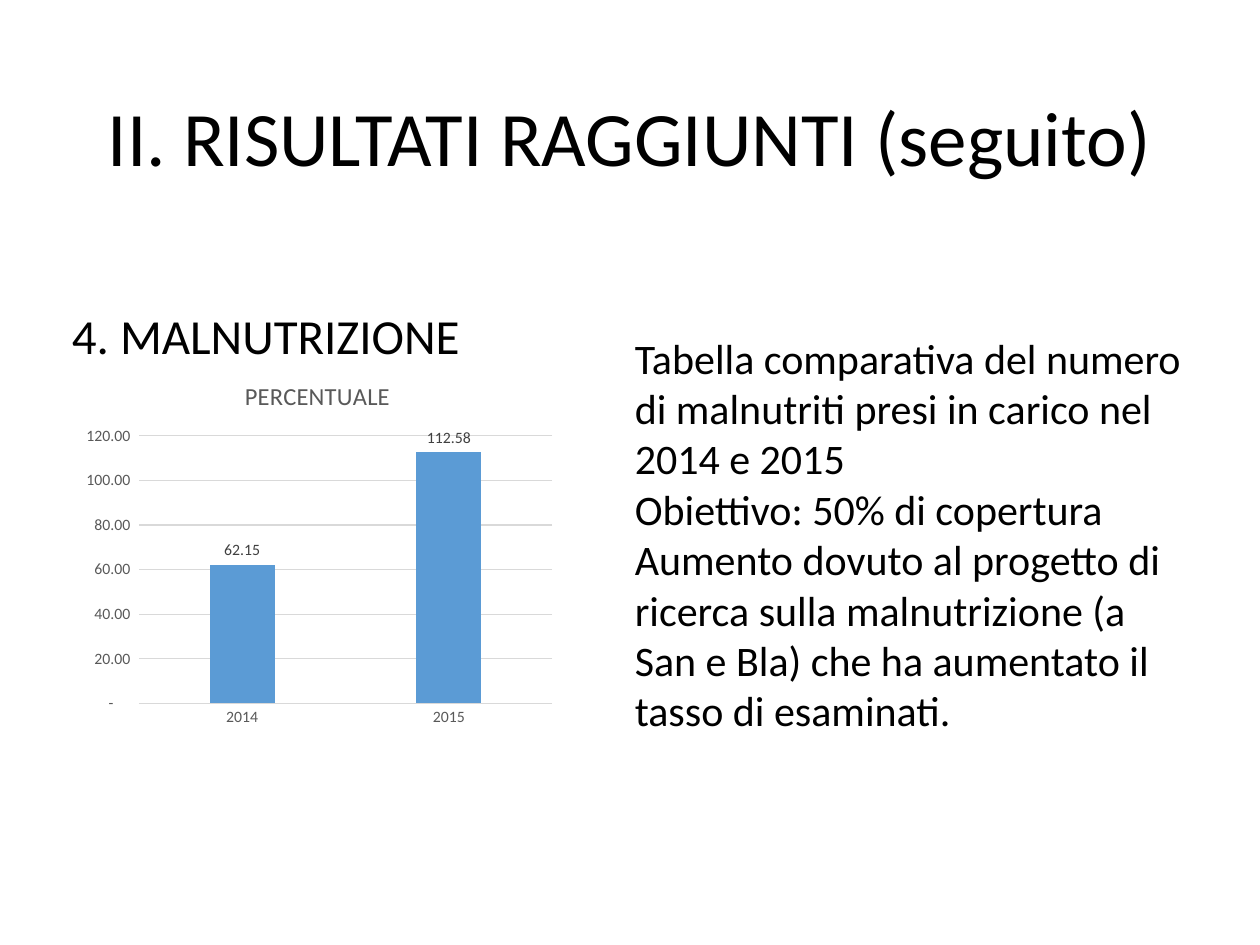
from pptx import Presentation
from pptx.chart.data import CategoryChartData
from pptx.dml.color import RGBColor
from pptx.enum.chart import XL_CHART_TYPE as ChartType, XL_LABEL_POSITION as LabelPos, XL_TICK_MARK as Tick
from pptx.enum.text import MSO_ANCHOR as Anchor, PP_ALIGN as Align
from pptx.oxml.ns import qn
from pptx.util import Inches, Pt

FONT = "Calibri"
COLORS = {"text": "000000", "bar": "5B9BD5", "axis": "595959", "grid": "D9D9D9", "label": "404040"}
WIDTH, HEIGHT = Inches(10), Inches(7.5)
TITLE_BOX = (0.069, 0.053, 0.862, 0.193)
BODY_BOX = (0.047, 0.324, 0.884, 0.476)
CHART_BOX = (0.058, 0.381, 0.388, 0.396)
NOTES_BOX = (0.494, 0.345, 0.457, 0.444)
ACCOUNTING = '_(* #,##0.00_);_(* \\(#,##0.00\\);_(* "-"??_);_(@_)'
COMMENTS = [
    "Tabella comparativa del numero di malnutriti presi in carico nel 2014 e 2015",
    "Obiettivo: 50% di copertura",
    "Aumento dovuto al progetto di ricerca sulla malnutrizione (a San e Bla) che ha aumentato il tasso di esaminati.",
]


def rgb(name):
    return RGBColor.from_string(COLORS[name])


def scale(box):
    x, y, w, h = box
    return int(x * WIDTH), int(y * HEIGHT), int(w * WIDTH), int(h * HEIGHT)


def style(font, size, color="text"):
    font.name, font.size, font.bold = FONT, Pt(size), False
    font.color.rgb = rgb(color)


def fill_text(sp, box, lines, size, align=Align.LEFT, anchor=Anchor.TOP, spacing=1.0, before=0):
    sp.left, sp.top, sp.width, sp.height = scale(box)
    tf = sp.text_frame
    tf.word_wrap = True
    tf.vertical_anchor = anchor
    tf.text = "\n".join(lines)
    for p in tf.paragraphs:
        p.alignment, p.line_spacing, p.space_before = align, spacing, Pt(before)
        style(p.font, size)


def add_title(s, box):
    fill_text(s.shapes.title, box, ["II. RISULTATI RAGGIUNTI (seguito)"], 44,
              Align.CENTER, Anchor.MIDDLE, 0.9)


def add_heading(s, box):
    sp = s.placeholders[1]
    fill_text(sp, box, ["4. MALNUTRIZIONE"], 28, spacing=0.9, before=10)
    props = sp.text_frame.paragraphs[0]._p.get_or_add_pPr()
    props.set("marL", "0")
    props.set("indent", "0")
    props.append(props.makeelement(qn("a:buNone"), {}))


def add_comments(s, box):
    fill_text(s.shapes.add_textbox(*scale(box)), box, COMMENTS, 24)


def add_percent_chart(s, box):
    data = CategoryChartData(number_format=ACCOUNTING)
    data.categories = ["2014", "2015"]
    data.add_series("PERCENTUALE", [62.15, 112.58])
    chart = s.shapes.add_chart(ChartType.COLUMN_CLUSTERED, *scale(box), data).chart
    style(chart.font, 10)
    chart.has_legend = False
    chart.has_title = True
    chart.chart_title.text_frame.text = "PERCENTUALE"
    style(chart.chart_title.text_frame.paragraphs[0].font, 14, "axis")
    chart.chart_title.include_in_layout = False

    for axis in (chart.category_axis, chart.value_axis):
        axis.major_tick_mark = axis.minor_tick_mark = Tick.NONE
        style(axis.tick_labels.font, 9, "axis")
    values = chart.value_axis
    values.minimum_scale, values.maximum_scale, values.major_unit = 0, 120, 20
    values.tick_labels.number_format = ACCOUNTING
    values.tick_labels.number_format_is_linked = False
    values.format.line.fill.background()
    for line in (chart.category_axis.format.line, values.major_gridlines.format.line):
        line.color.rgb, line.width = rgb("grid"), Pt(0.75)

    plot = chart.plots[0]
    plot.gap_width, plot.overlap, plot.vary_by_categories = 219, -27, False
    series = plot.series[0]
    series.format.fill.solid()
    series.format.fill.fore_color.rgb = rgb("bar")
    labels = series.data_labels
    labels.show_value = True
    labels.position = LabelPos.OUTSIDE_END
    style(labels.font, 9, "label")


def main():
    prs = Presentation()
    prs.slide_width, prs.slide_height = WIDTH, HEIGHT
    s = prs.slides.add_slide(prs.slide_layouts[1])
    add_title(s, TITLE_BOX)
    add_heading(s, BODY_BOX)
    add_comments(s, NOTES_BOX)
    add_percent_chart(s, CHART_BOX)
    prs.save("out.pptx")


if __name__ == "__main__":
    main()
